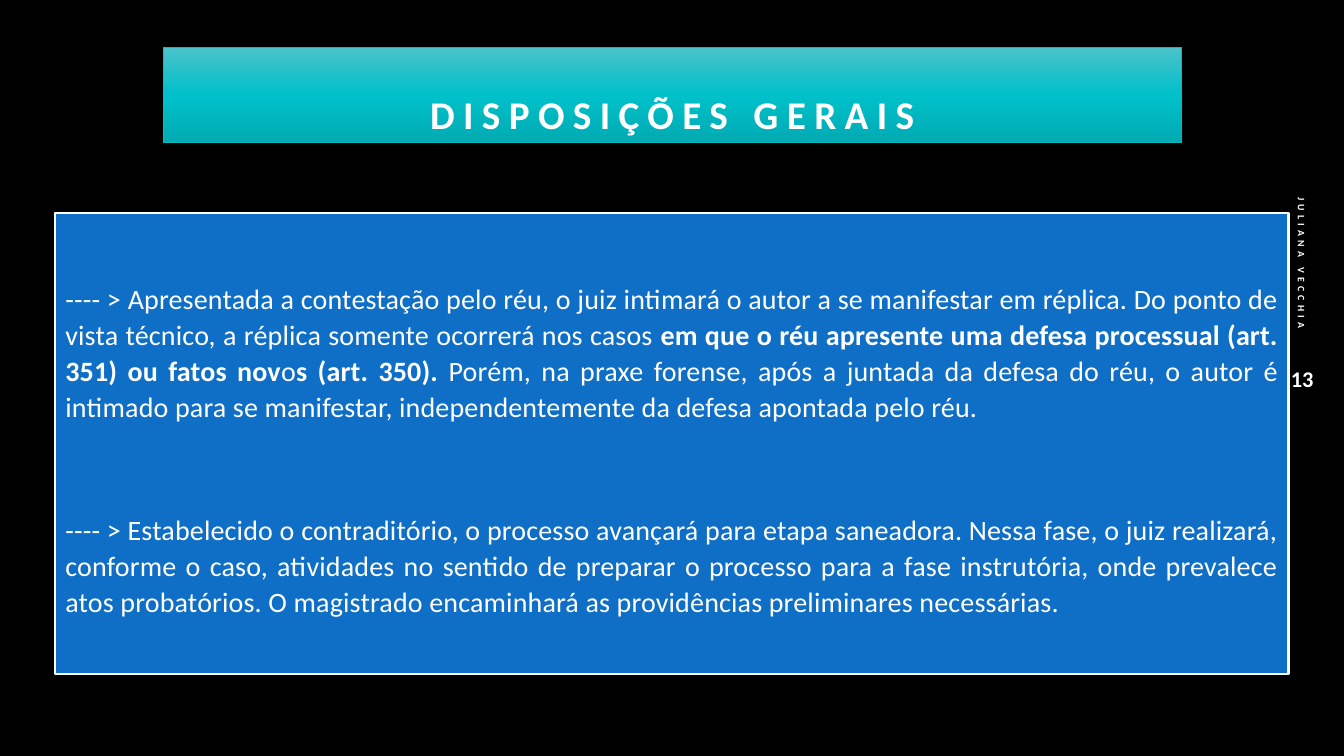
from copy import deepcopy

from pptx import Presentation
from pptx.dml.color import RGBColor
from pptx.enum.shapes import MSO_SHAPE as Shape
from pptx.enum.text import MSO_ANCHOR as Anchor, PP_ALIGN as Align
from pptx.oxml.ns import qn
from pptx.util import Inches, Pt

BLACK = RGBColor(0x00, 0x00, 0x00)
WHITE = RGBColor(0xFF, 0xFF, 0xFF)
BLUE = RGBColor(0x0F, 0x6F, 0xC6)
EDGE = RGBColor(0x09, 0xB8, 0xC0)
TEALS = (
    RGBColor(0x4B, 0xC3, 0xCB),
    RGBColor(0x00, 0xC0, 0xC9),
    RGBColor(0x00, 0xAB, 0xB3),
)
FONT = "Calibri"

# Each paragraph is a list of (text, bold) runs.
POINTS = [
    [
        ("---- > Apresentada a contestação pelo réu, o juiz intimará o autor a "
         "se manifestar em réplica. Do ponto de vista técnico, a réplica "
         "somente ocorrerá nos casos ", False),
        ("em que o réu apresente uma defesa processual (art. 351) ou fatos nov",
         True),
        ("o", False),
        ("s (art. 350).", True),
        (" Porém, na praxe forense, após a juntada da defesa do réu, o autor é "
         "intimado para se manifestar, independentemente da defesa apontada "
         "pelo réu.", False),
    ],
    [
        ("---- > Estabelecido o contraditório, o processo avançará para etapa "
         "saneadora. Nessa fase, o juiz realizará, conforme o caso, atividades "
         "no sentido de preparar o processo para a fase instrutória, onde "
         "prevalece atos probatórios. O magistrado encaminhará as providências "
         "preliminares necessárias.", False),
    ],
]


def place(shape, left, top, width, height):
    shape.left, shape.top = Inches(left), Inches(top)
    shape.width, shape.height = Inches(width), Inches(height)


def add_run(para, text, size, bold=True, gap=0):
    """Add white text; gap is the letter spacing in points."""
    run = para.add_run()
    run.text = text
    font = run.font
    font.name, font.size, font.bold = FONT, Pt(size), bold
    font.color.rgb = WHITE
    if gap:
        run._r.get_or_add_rPr().set("spc", str(round(gap * 100)))


def outline(shape, color, width):
    shape.line.color.rgb = color
    shape.line.width = Pt(width)


def shade(shape, colors):
    """Fill from top to bottom with three evenly spaced colours."""
    fill = shape.fill
    fill.gradient()
    fill.gradient_angle = 270
    first = shape._element.spPr.find(".//" + qn("a:gs"))
    first.addnext(deepcopy(first))
    for i, (stop, color) in enumerate(zip(fill.gradient_stops, colors)):
        stop.color.rgb = color
        stop.position = i / 2


def set_title(slide, text):
    title = slide.shapes.title
    place(title, 1.62, 0.47, 10.1, 0.94)
    shade(title, TEALS)
    outline(title, EDGE, 0.5)
    frame = title.text_frame
    frame.vertical_anchor = Anchor.BOTTOM
    para = frame.paragraphs[0]
    para.alignment = Align.CENTER
    para.line_spacing = 1.2
    add_run(para, text, 28, gap=6)


def add_panel(slide, points):
    panel = slide.shapes.add_shape(
        Shape.RECTANGLE, Inches(0.55), Inches(2.11), Inches(12.23), Inches(4.58))
    panel.shadow.inherit = False
    panel.fill.solid()
    panel.fill.fore_color.rgb = BLUE
    outline(panel, WHITE, 1.5)
    frame = panel.text_frame
    frame.word_wrap = True
    frame.vertical_anchor = Anchor.TOP
    frame.margin_top = Inches(0.66)
    for i, runs in enumerate(points):
        para = frame.add_paragraph() if i else frame.paragraphs[0]
        para.alignment = Align.JUSTIFY
        para.line_spacing = 1.07
        para.space_before = Pt(62 if i else 0)
        for text, bold in runs:
            add_run(para, text, 20, bold, 0.1)


def add_label(slide, text, box, size, align, gap=0, turn=0):
    label = slide.shapes.add_textbox(*map(Inches, box))
    label.rotation = turn
    frame = label.text_frame
    frame.word_wrap = True
    frame.vertical_anchor = Anchor.MIDDLE
    para = frame.paragraphs[0]
    para.alignment = align
    add_run(para, text, size, gap=gap)


def main():
    deck = Presentation()
    deck.slide_width, deck.slide_height = Inches(13.33), Inches(7.5)
    slide = deck.slides.add_slide(deck.slide_layouts[5])
    slide.background.fill.solid()
    slide.background.fill.fore_color.rgb = BLACK
    set_title(slide, "DISPOSIÇÕES GERAIS")
    add_panel(slide, POINTS)
    add_label(slide, "13", (12.57, 3.52, 0.69, 0.47), 16, Align.CENTER)
    add_label(slide, "JULIANA VECCHIA ", (11.45, 1.76, 2.92, 0.4), 7,
              Align.RIGHT, gap=3, turn=90)
    deck.save("out.pptx")


if __name__ == "__main__":
    main()
